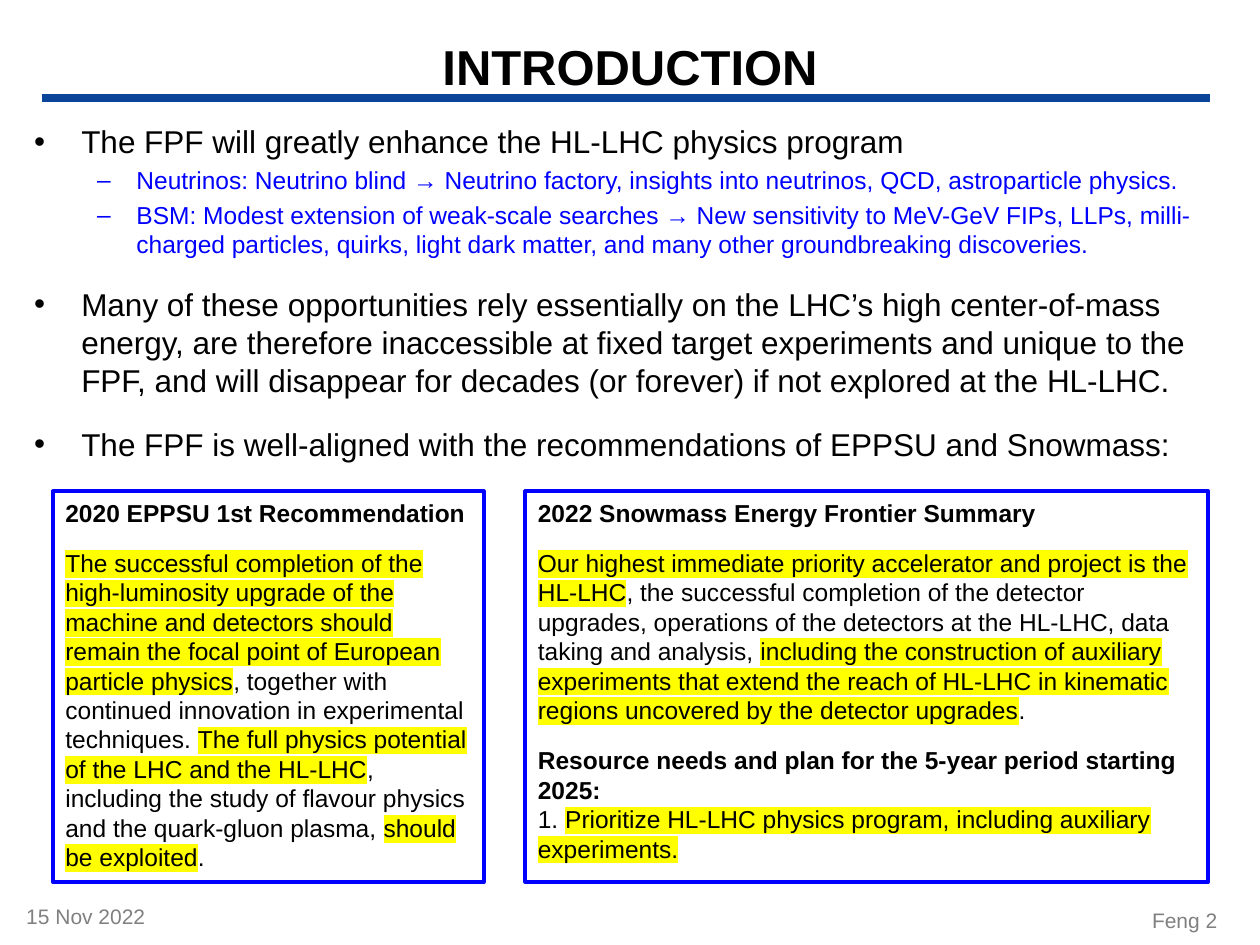
import pptx
import pptx.dml.color
import pptx.enum.shapes
import pptx.enum.text
import pptx.oxml
import pptx.oxml.ns
import pptx.util
from pptx.util import Inches, Pt

RGBColor = pptx.dml.color.RGBColor
BLACK = RGBColor(0x00, 0x00, 0x00)
BLUE = RGBColor(0x00, 0x00, 0xFF)
RULE_BLUE = RGBColor(0x0B, 0x45, 0x99)
GRAY = RGBColor(0x80, 0x80, 0x80)
YELLOW = RGBColor(0xFF, 0xFF, 0x00)

ALIGN = pptx.enum.text.PP_ALIGN
ANCHOR = pptx.enum.text.MSO_ANCHOR
NO_AUTOFIT = pptx.enum.text.MSO_AUTO_SIZE.NONE

# Bullets: level, space before in points, text
BULLETS = [
    (0, 0, "The FPF will greatly enhance the HL-LHC physics program"),
    (1, 3, "Neutrinos: Neutrino blind → Neutrino factory, insights into "
           "neutrinos, QCD, astroparticle physics."),
    (1, 3, "BSM: Modest extension of weak-scale searches → New sensitivity to "
           "MeV-GeV FIPs, LLPs, milli-charged particles, quirks, light dark "
           "matter, and many other groundbreaking discoveries."),
    (0, 15, "Many of these opportunities rely essentially on the LHC’s high "
            "center-of-mass energy, are therefore inaccessible at fixed target "
            "experiments and unique to the FPF, and will disappear for decades "
            "(or forever) if not explored at the HL-LHC."),
    (0, 15, "The FPF is well-aligned with the recommendations of EPPSU and "
            "Snowmass:"),
]
LEVEL_STYLE = {0: (18, BLACK), 1: (14, BLUE)}

# Quotes: paragraphs of (space before, runs); a run is (text, style)
PLAIN, BOLD, MARKED = "plain", "bold", "marked"
SNOWMASS = [
    (0, [("2022 Snowmass Energy Frontier Summary", BOLD)]),
    (12, [("Our highest immediate priority accelerator and project is the "
           "HL-LHC", MARKED),
          (", the successful completion of the detector upgrades, operations "
           "of the detectors at the HL-LHC, data taking and analysis, ", PLAIN),
          ("including the construction of auxiliary experiments that extend "
           "the reach of HL-LHC in kinematic regions uncovered by the detector "
           "upgrades", MARKED),
          (".", PLAIN)]),
    (12, [("Resource needs and plan for the 5-year period starting 2025:",
           BOLD)]),
    (0, [("1. ", PLAIN),
         ("Prioritize HL-LHC physics program, including auxiliary "
          "experiments.", MARKED)]),
]
EPPSU = [
    (0, [("2020 EPPSU 1st Recommendation", BOLD)]),
    (12, [("The successful completion of the high-luminosity upgrade of the "
           "machine and detectors should remain the focal point of European "
           "particle physics", MARKED),
          (", together with continued innovation in experimental techniques. ",
           PLAIN),
          ("The full physics potential of the LHC and the HL-LHC", MARKED),
          (", including the study of flavour physics and the quark-gluon "
           "plasma, ", PLAIN),
          ("should be exploited", MARKED),
          (".", PLAIN)]),
]


def place(shape, left, top, width, height):
    shape.left, shape.top = Inches(left), Inches(top)
    shape.width, shape.height = Inches(width), Inches(height)


def add_run(paragraph, text, size, color, bold=False, highlight=None):
    run = paragraph.add_run()
    run.text = text
    run.font.name = "Arial"
    run.font.size = Pt(size)
    run.font.bold = bold
    run.font.color.rgb = color
    if highlight is not None:
        mark = pptx.oxml.parse_xml(
            f'<a:highlight {pptx.oxml.ns.nsdecls("a")}>'
            f'<a:srgbClr val="{highlight}"/></a:highlight>')
        properties = run.font.fill._xPr
        properties.find(pptx.oxml.ns.qn("a:solidFill")).addnext(mark)


def next_paragraph(frame, index):
    return frame.add_paragraph() if index else frame.paragraphs[0]


def add_title(slide, text):
    title = slide.shapes.title
    place(title, 0, 0.21, 10, 0.62)
    frame = title.text_frame
    frame.auto_size = NO_AUTOFIT
    frame.vertical_anchor = ANCHOR.MIDDLE
    frame.paragraphs[0].alignment = ALIGN.CENTER
    add_run(frame.paragraphs[0], text, 28, BLACK, bold=True)


def add_rule(slide):
    rule = slide.shapes.add_connector(
        pptx.enum.shapes.MSO_CONNECTOR.STRAIGHT,
        Inches(0.33), Inches(0.78), Inches(9.6), Inches(0.78))
    rule.line.color.rgb = RULE_BLUE
    rule.line.width = Pt(4.5)
    rule._element.spPr.append(pptx.oxml.parse_xml(
        f'<a:effectLst {pptx.oxml.ns.nsdecls("a")}/>'))


def add_bullets(slide, bullets):
    body = slide.placeholders[1]
    place(body, 0.17, 0.92, 9.5, 5.25)
    frame = body.text_frame
    frame.auto_size = NO_AUTOFIT
    for index, (level, space, text) in enumerate(bullets):
        paragraph = next_paragraph(frame, index)
        paragraph.level = level
        paragraph.space_before = Pt(space)
        size, color = LEVEL_STYLE[level]
        add_run(paragraph, text, size, color)


def add_quote(slide, left, width, paragraphs):
    quote = slide.shapes.add_shape(
        pptx.enum.shapes.MSO_SHAPE.RECTANGLE,
        Inches(left), Inches(3.9), Inches(width), Inches(3.1))
    quote.shadow.inherit = False
    quote.fill.background()
    quote.line.color.rgb = BLUE
    quote.line.width = Pt(2.25)
    frame = quote.text_frame
    frame.word_wrap = True
    frame.vertical_anchor = ANCHOR.TOP
    for index, (space, runs) in enumerate(paragraphs):
        paragraph = next_paragraph(frame, index)
        paragraph.alignment = ALIGN.LEFT
        paragraph.space_before = Pt(space)
        for text, style in runs:
            add_run(paragraph, text, 14, BLACK, bold=style == BOLD,
                    highlight=YELLOW if style == MARKED else None)


def add_footer(slide, left, top, text, alignment):
    footer = slide.shapes.add_textbox(
        Inches(left), Inches(top), Inches(2.08), Inches(0.35))
    footer.text_frame.word_wrap = True
    paragraph = footer.text_frame.paragraphs[0]
    paragraph.alignment = alignment
    add_run(paragraph, text, 12, GRAY)


def main():
    deck = pptx.Presentation()
    deck.slide_width, deck.slide_height = Inches(10), Inches(7.5)
    slide = deck.slides.add_slide(deck.slide_layouts[1])

    # Heading and main points
    add_rule(slide)
    add_title(slide, "INTRODUCTION")
    add_bullets(slide, BULLETS)

    # Quoted recommendations
    add_quote(slide, 4.17, 5.42, SNOWMASS)
    add_quote(slide, 0.42, 3.42, EPPSU)

    # Date and page
    add_footer(slide, 0.11, 7.12, "15 Nov 2022", ALIGN.LEFT)
    add_footer(slide, 7.68, 7.15, "Feng 2", ALIGN.RIGHT)

    deck.save("out.pptx")


if __name__ == "__main__":
    main()
